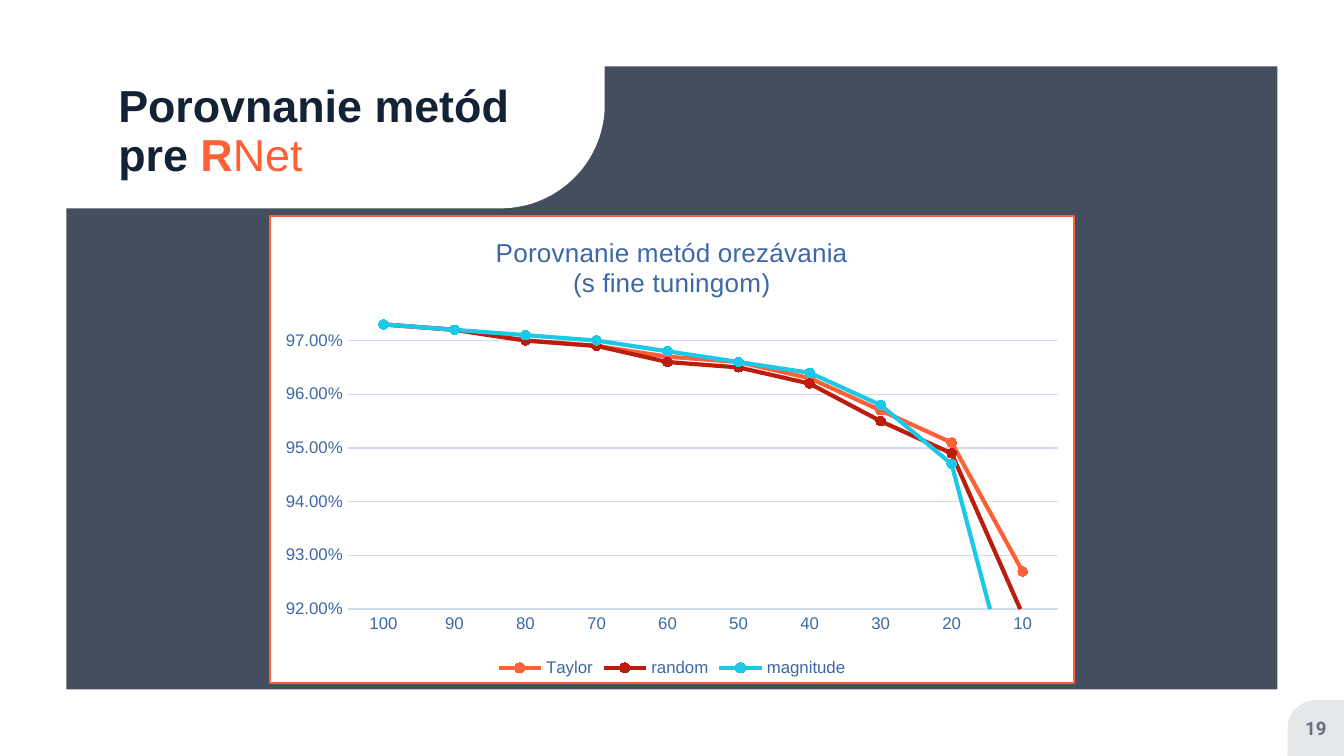
from dataclasses import dataclass

from lxml import etree
from pptx import Presentation
from pptx import util as u
from pptx.chart.data import CategoryChartData
from pptx.dml.color import RGBColor
from pptx.enum import chart as ch, shapes, text
from pptx.oxml.ns import qn

NAVY, CORAL, BLUE, PALE, WHITE = "142236", "FF6035", "3D68A5", "CFDCED", "FFFFFF"
KIND = shapes.MSO_SHAPE
WIDE = 10
HIGH = WIDE * 9 / 16


@dataclass
class Panel:
    kind: int
    box: tuple
    fill: str
    adj: float | None = None
    flip: bool = False
    turn: int = 0
    alpha: int = 100


@dataclass
class Series:
    name: str
    tint: str
    vals: tuple


PANELS = [
    Panel(KIND.RECTANGLE, (0, 0, WIDE, HIGH), NAVY, alpha=80),
    Panel(KIND.FRAME, (0, 0, WIDE, HIGH), WHITE, 0.088),
    Panel(KIND.ROUND_1_RECTANGLE, (0, 0, 4.5, 1.55), WHITE, 0.5, True, 180),
    Panel(KIND.ROUND_1_RECTANGLE, (9.58, 5.21, 0.42, 0.42), "E5E8EB", 0.5, True),
]
SERIES = [
    Series("Taylor", CORAL, (0.973, 0.972, 0.97, 0.969, 0.967,
                             0.966, 0.963, 0.957, 0.951, 0.927)),
    Series("random", "BB1C0B", (0.973, 0.972, 0.97, 0.969, 0.966,
                                0.965, 0.962, 0.955, 0.949, 0.919)),
    Series("magnitude", "1DC8E6", (0.973, 0.972, 0.971, 0.97, 0.968,
                                   0.966, 0.964, 0.958, 0.947, 0.897)),
]


def place(box: tuple) -> list:
    return [u.Inches(n) for n in box]


def paint(fill, tint: str) -> None:
    fill.solid()
    fill.fore_color.rgb = RGBColor.from_string(tint)


def stroke(line, tint: str, width: float) -> None:
    paint(line.fill, tint)
    line.width = u.Pt(width)


def style(font, size: float, tint: str, bold: bool = False, face: str = "Arial") -> None:
    font.name, font.size, font.bold = face, u.Pt(size), bold
    font.color.rgb = RGBColor.from_string(tint)


def draw_panel(slide, item: Panel) -> None:
    shape = slide.shapes.add_shape(item.kind, *place(item.box))
    shape.shadow.inherit = False
    paint(shape.fill, item.fill)
    shape.line.fill.background()
    shape.rotation = item.turn
    if item.adj is not None:
        shape.adjustments[0] = item.adj
    if item.flip:
        shape._element.spPr.find(qn("a:xfrm")).set("flipH", "1")
    if item.alpha < 100:
        tint = shape._element.spPr.find(qn("a:solidFill"))[0]
        etree.SubElement(tint, qn("a:alpha"), val=str(item.alpha * 1000))


def add_text(slide, box: tuple, foot: float = 0):
    frame = slide.shapes.add_textbox(*place(box)).text_frame
    frame.word_wrap = True
    frame.vertical_anchor = text.MSO_ANCHOR.MIDDLE
    frame.margin_left = frame.margin_right = frame.margin_top = 0
    frame.margin_bottom = u.Inches(foot)
    return frame.paragraphs[0]


def draw_title(slide) -> None:
    para = add_text(slide, (0.88, 0.41, 3.65, 1.55), 0.4)
    para.line_spacing = 0.9
    for words, tint, bold in (("Porovnanie metód\vpre ", NAVY, True),
                              ("R", CORAL, True), ("Net", CORAL, False)):
        for count, part in enumerate(words.split("\v")):
            if count:
                para.add_line_break()
            run = para.add_run()
            run.text = part
            style(run.font, 24, tint, bold)


def draw_number(slide) -> None:
    para = add_text(slide, (9.58, 5.21, 0.42, 0.42))
    para.text = "19"
    para.alignment = text.PP_ALIGN.CENTER
    style(para.font, 10, "667180", True, "Roboto")


def draw_chart(slide) -> None:
    data = CategoryChartData(number_format="0.00%")
    data.categories = [str(n) for n in range(100, 0, -10)]
    for item in SERIES:
        data.add_series(item.name, item.vals)
    chart = slide.shapes.add_chart(
        ch.XL_CHART_TYPE.LINE_MARKERS, *place((2, 1.6, 6, 3.49)), data).chart
    style(chart.font, 10, NAVY)

    title = chart.chart_title
    title.include_in_layout = False
    para = title.text_frame.paragraphs[0]
    para.text = "Porovnanie metód orezávania\v(s fine tuningom)"
    style(para.font, 14, BLUE)

    chart.has_legend = True
    chart.legend.position = ch.XL_LEGEND_POSITION.BOTTOM
    chart.legend.include_in_layout = False
    style(chart.legend.font, 9, BLUE)

    cats, vals = chart.category_axis, chart.value_axis
    for axis in (cats, vals):
        axis.major_tick_mark = axis.minor_tick_mark = ch.XL_TICK_MARK.NONE
        style(axis.tick_labels.font, 9, BLUE)
    stroke(cats.format.line, PALE, 0.75)
    vals.format.line.fill.background()
    stroke(vals.major_gridlines.format.line, PALE, 0.75)
    vals.minimum_scale, vals.maximum_scale, vals.major_unit = 0.92, 0.975, 0.01
    vals.tick_labels.number_format = "0.00%"
    vals.tick_labels.number_format_is_linked = False

    plot = chart.plots[0]
    plot.vary_by_categories = False
    for line, item in zip(plot.series, SERIES):
        line.smooth = False
        stroke(line.format.line, item.tint, 2.25)
        line.marker.style = ch.XL_MARKER_STYLE.CIRCLE
        line.marker.size = 5
        paint(line.marker.format.fill, item.tint)
        stroke(line.marker.format.line, item.tint, 0.75)
    frame_chart(chart)


def frame_chart(chart) -> None:
    root = chart._chartSpace
    props = etree.Element(qn("c:spPr"))
    edge = etree.Element(qn("a:ln"), w=str(u.Pt(1)))
    for node, tint in ((props, WHITE), (edge, CORAL)):
        fill = etree.SubElement(node, qn("a:solidFill"))
        etree.SubElement(fill, qn("a:srgbClr"), val=tint)
    props.append(edge)
    root.find(qn("c:chart")).addnext(props)


def main() -> None:
    deck = Presentation()
    deck.slide_width, deck.slide_height = u.Inches(WIDE), u.Inches(HIGH)
    slide = deck.slides.add_slide(deck.slide_layouts[6])
    for item in PANELS:
        draw_panel(slide, item)
    draw_title(slide)
    draw_number(slide)
    draw_chart(slide)
    deck.save("out.pptx")


if __name__ == "__main__":
    main()
